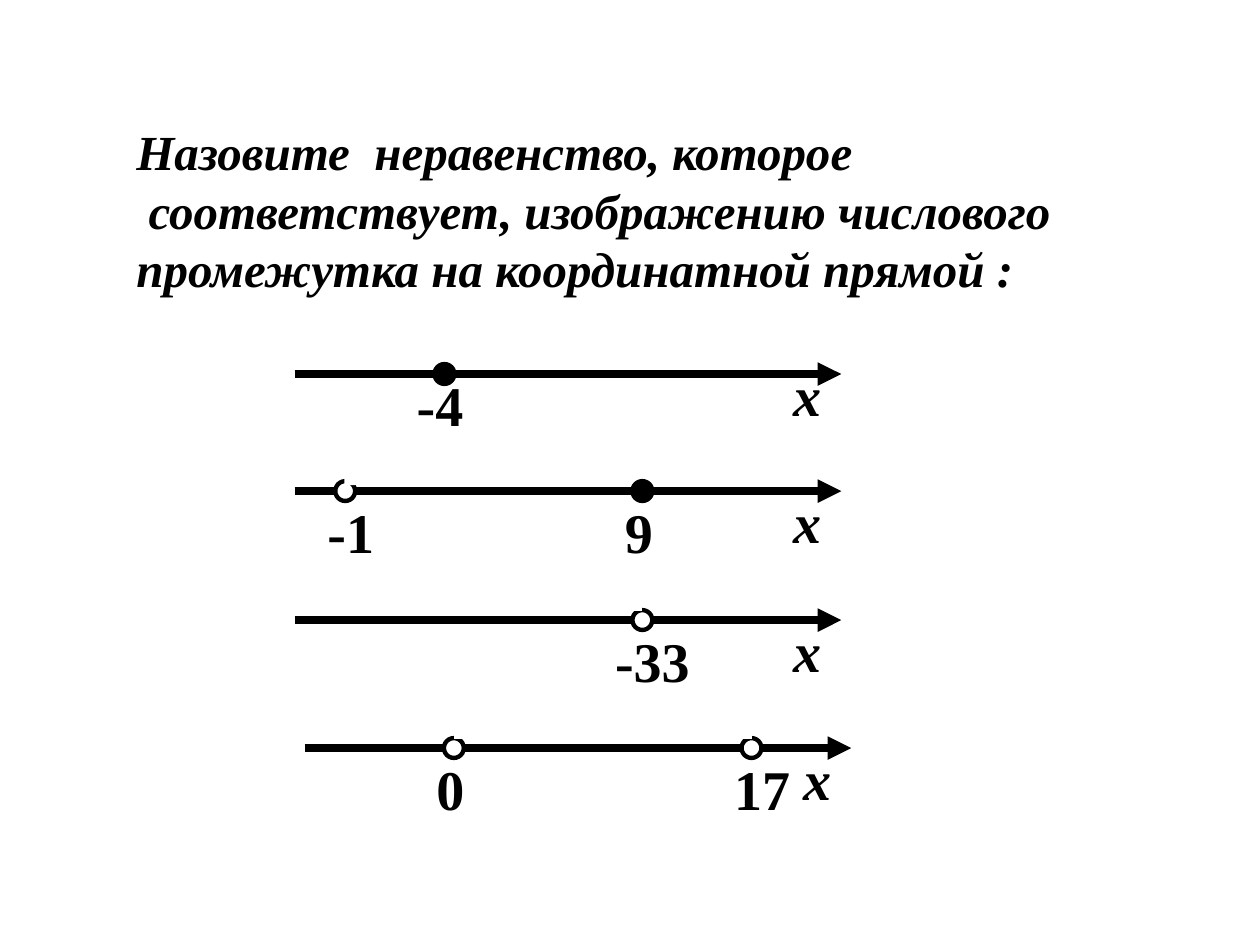
from dataclasses import dataclass
from lxml.etree import SubElement
from pptx import Presentation
from pptx.dml.color import RGBColor
from pptx.enum.shapes import MSO_CONNECTOR, MSO_SHAPE
from pptx.enum.text import MSO_AUTO_SIZE
from pptx.oxml.ns import qn
from pptx.util import Cm, Pt

TITLE = [
    "Назовите  неравенство, которое",
    " соответствует, изображению числового",
    "промежутка на координатной прямой :",
]


def paint(color_format, value):
    color_format.rgb = RGBColor.from_string(value)


@dataclass
class Point:
    label: str
    center: float
    label_left: float
    label_width: float
    closed: bool = False


@dataclass
class NumberLine:
    left: float
    top: float
    points: list
    interval: tuple
    label_rise: float = 0


class SlideBuilder:
    font = "Times New Roman"
    ink = "000000"
    paper = "FFFFFF"
    dot_size = 0.4
    axis_length = 11.02

    def __init__(self, slide):
        self.slide = slide
        self.shapes = slide.shapes

    def text(self, lines, left, top, width, height, size, italic=False):
        shape = self.shapes.add_textbox(Cm(left), Cm(top), Cm(width), Cm(height))
        frame = shape.text_frame
        frame.word_wrap = False
        frame.auto_size = MSO_AUTO_SIZE.SHAPE_TO_FIT_TEXT
        frame.text = "\n".join(lines)
        for paragraph in frame.paragraphs:
            font = paragraph.font
            font.name, font.size = self.font, Pt(size)
            font.bold, font.italic = True, italic
            paint(font.color, self.ink)

    def line(self, start, end, color, width, arrow=False):
        connector = self.shapes.add_connector(
            MSO_CONNECTOR.STRAIGHT, *(Cm(value) for value in (*start, *end)))
        connector.line.width = Pt(width)
        paint(connector.line.color, color)
        if arrow:
            SubElement(connector.line._get_or_add_ln(), qn("a:tailEnd"), type="triangle")
        SubElement(connector._element.spPr, qn("a:effectLst"))

    def dot(self, center, middle, closed):
        radius = self.dot_size / 2
        shape = self.shapes.add_shape(
            MSO_SHAPE.OVAL, Cm(center - radius), Cm(middle - radius),
            Cm(self.dot_size), Cm(self.dot_size))
        shape.shadow.inherit = False
        shape.fill.solid()
        paint(shape.fill.fore_color, self.ink if closed else self.paper)
        shape.line.width = Pt(2.5)
        paint(shape.line.color, self.ink)

    def dots(self, row, closed):
        for point in row.points:
            if point.closed == closed:
                self.dot(point.center, row.top, closed)

    def number_line(self, row):
        self.shapes = self.slide.shapes.add_group_shape().shapes
        label_top = row.top - row.label_rise
        self.line((row.left, row.top), (row.left + self.axis_length, row.top),
                  self.ink, 4.5, arrow=True)
        self.dots(row, closed=False)
        for point in row.points:
            self.text([point.label], point.label_left, label_top,
                      point.label_width, 1.6, 32)
        start, end, start_rise, end_rise = row.interval
        self.line((start, row.top - start_rise), (end, row.top - end_rise),
                  self.paper, 12)
        self.text(["х"], row.left + 9.81, label_top - 0.2, 1.07, 1.6, 32, italic=True)
        self.dots(row, closed=True)
        self.shapes = self.slide.shapes


def main():
    presentation = Presentation()
    presentation.slide_width, presentation.slide_height = Cm(25.4), Cm(19.05)
    slide = presentation.slides.add_slide(presentation.slide_layouts[6])
    builder = SlideBuilder(slide)
    builder.text(TITLE, 2.5, 2.32, 19.69, 3.84, 28, italic=True)

    number_lines = [
        NumberLine(5.94, 7.54, [Point("-4", 8.96, 8.15, 1.5, True)],
                   (9.22, 16.28, 0.36, 0.36), 0.2),
        NumberLine(5.94, 9.9, [Point("-1", 6.96, 6.35, 1.5),
                               Point("9", 12.95, 12.35, 1.1, True)],
                   (6.94, 12.95, 0.33, 0.38)),
        NumberLine(5.94, 12.5, [Point("-33", 12.95, 12.15, 2.2)],
                   (5.94, 12.95, 0.39, 0.39)),
        NumberLine(6.14, 15.08, [Point("0", 9.15, 8.55, 1.1),
                                 Point("17", 15.15, 14.55, 1.7)],
                   (9.15, 15.15, 0.39, 0.39)),
    ]
    for row in number_lines:
        builder.number_line(row)
    presentation.save("out.pptx")


if __name__ == "__main__":
    main()
